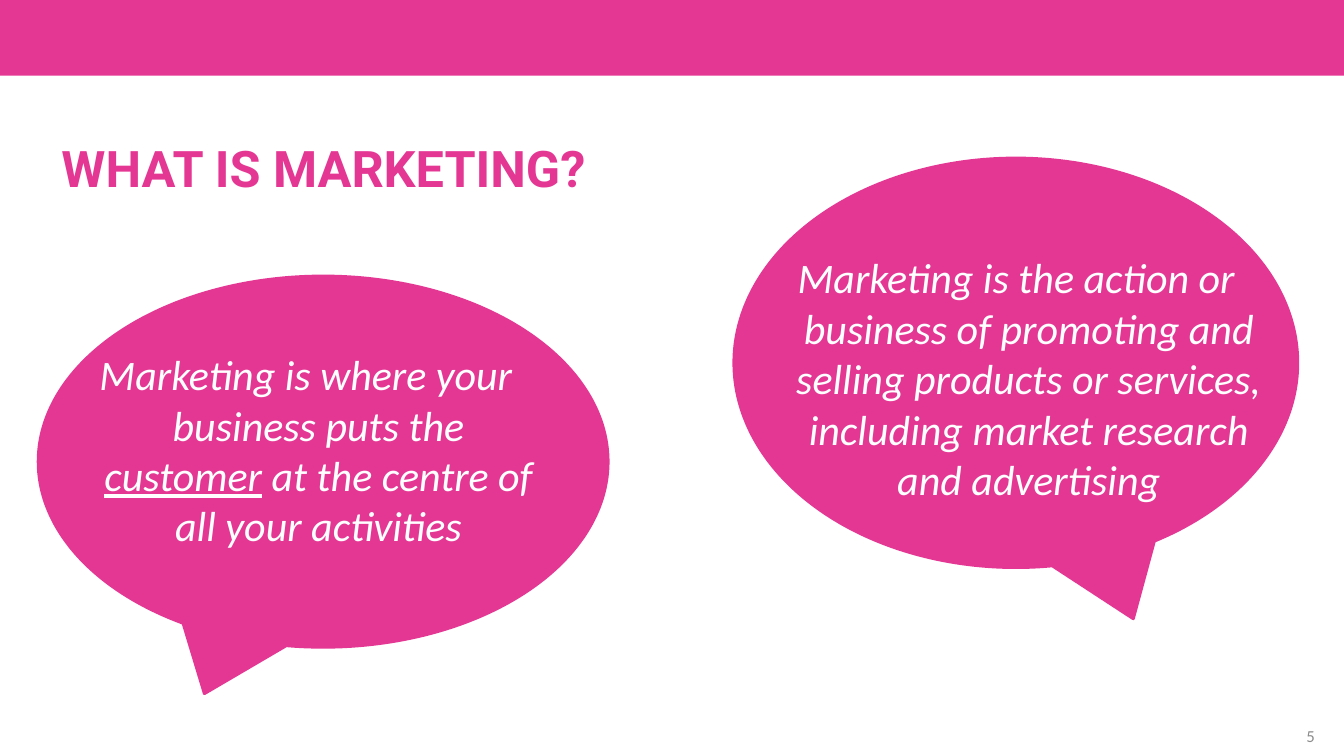
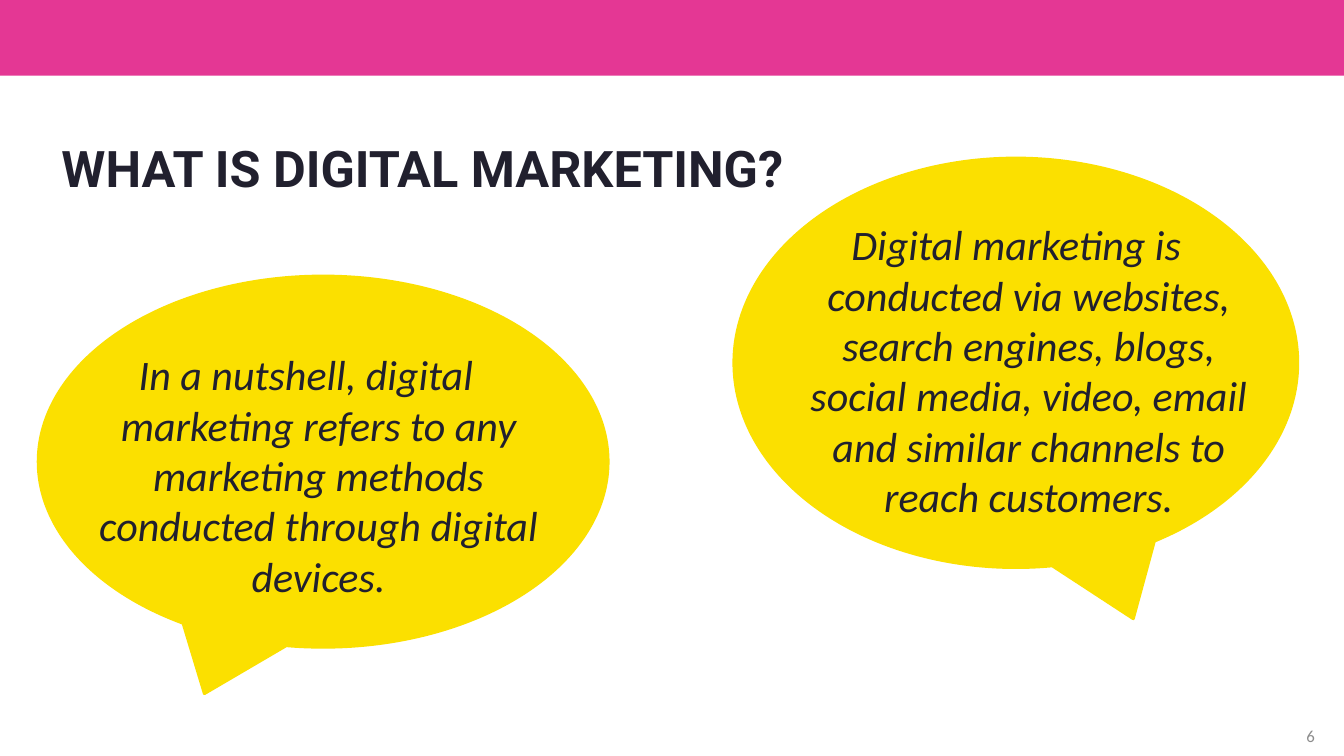
import dataclasses

import pptx
import pptx.dml.color
import pptx.enum.shapes
import pptx.enum.text
import pptx.util

Inches = pptx.util.Inches
Color = pptx.dml.color.RGBColor
Align = pptx.enum.text.PP_ALIGN
Anchor = pptx.enum.text.MSO_ANCHOR
Preset = pptx.enum.shapes.MSO_SHAPE


@dataclasses.dataclass(frozen=True)
class Theme:
    pink: Color = Color(0xE4, 0x37, 0x94)
    yellow: Color = Color(0xFB, 0xE0, 0x00)
    ink: Color = Color(0x21, 0x20, 0x2E)
    white: Color = Color(0xFF, 0xFF, 0xFF)
    gray: Color = Color(0x8C, 0x8C, 0x8C)
    title_font: str = "Roboto"
    body_font: str = "Calibri"
    title_size: int = 36
    quote_size: int = 30
    number_size: int = 12
    outline: float = 2.25


@dataclasses.dataclass(frozen=True)
class Box:
    left: float
    top: float
    width: float
    height: float

    def inches(self):
        return [Inches(value) for value in dataclasses.astuple(self)]

    def inside(self, left, top, width, height):
        return Box(self.left + left, self.top + top, width, height)


THEME = Theme()
PAGE = Box(0, 0, 13.33, 7.5)
BAND = PAGE.inside(0, 0, PAGE.width, 0.75)
TITLE = PAGE.inside(0.51, 1.38, 12.31, 0.69)
NUMBER = PAGE.inside(8.44, 7.17, 4.7, 0.25)
LEFT_BUBBLE = PAGE.inside(0.38, 2.74, 5.65, 3.68)
RIGHT_BUBBLE = PAGE.inside(7.28, 1.57, 5.59, 4.06)


def add_run(paragraph, text, font_name, size, color, bold=False, italic=False, underline=False):
    run = paragraph.add_run()
    run.text = text
    run.font.name = font_name
    run.font.size = pptx.util.Pt(size)
    run.font.color.rgb = color
    run.font.bold = bold
    run.font.italic = italic
    run.font.underline = underline


def add_filled_shape(slide, preset, box, color):
    shape = slide.shapes.add_shape(preset, *box.inches())
    shape.shadow.inherit = False
    shape.fill.solid()
    shape.fill.fore_color.rgb = color
    return shape


def add_text_box(slide, box, alignment, anchor):
    frame = slide.shapes.add_textbox(*box.inches()).text_frame
    frame.word_wrap = True
    frame.vertical_anchor = anchor
    paragraph = frame.paragraphs[0]
    paragraph.alignment = alignment
    return paragraph


def add_band(slide, box):
    band = add_filled_shape(slide, Preset.RECTANGLE, box, THEME.pink)
    band.line.fill.background()


def add_number(slide, box, number):
    paragraph = add_text_box(slide, box, Align.RIGHT, Anchor.MIDDLE)
    add_run(paragraph, str(number), THEME.body_font, THEME.number_size, THEME.gray)


def place_title(slide, box, text, color):
    title = slide.shapes.title
    title.left, title.top, title.width, title.height = box.inches()
    frame = title.text_frame
    frame.auto_size = pptx.enum.text.MSO_AUTO_SIZE.NONE
    frame.vertical_anchor = Anchor.TOP
    paragraph = frame.paragraphs[0]
    paragraph.alignment = Align.LEFT
    paragraph.line_spacing = 0.9
    add_run(paragraph, text, THEME.title_font, THEME.title_size, color, bold=True)


def add_bubble(slide, box, color, tail_right=False):
    bubble = add_filled_shape(slide, Preset.OVAL_CALLOUT, box, color)
    bubble.line.color.rgb = color
    bubble.line.width = pptx.util.Pt(THEME.outline)
    if tail_right:
        bubble.adjustments[0] = -bubble.adjustments[0]


def add_quote(slide, box, pieces, color):
    paragraph = add_text_box(slide, box, Align.CENTER, Anchor.TOP)
    properties = paragraph._p.get_or_add_pPr()
    properties.set("marL", str(Inches(0.25)))
    properties.set("indent", str(Inches(-0.25)))
    for text, underline in pieces:
        add_run(paragraph, text, THEME.body_font, THEME.quote_size, color,
                italic=True, underline=underline)


def add_definition_slide(presentation, number, title, title_color, bubble_color, text_color,
                         left_quote, right_quote, right_quote_top):
    slide = presentation.slides.add_slide(presentation.slide_layouts.get_by_name("Title Only"))
    add_band(slide, BAND)
    add_number(slide, NUMBER, number)
    place_title(slide, TITLE, title, title_color)
    add_bubble(slide, LEFT_BUBBLE, bubble_color)
    add_quote(slide, LEFT_BUBBLE.inside(0.24, 0.67, 4.83, 2.63), left_quote, text_color)
    add_bubble(slide, RIGHT_BUBBLE, bubble_color, tail_right=True)
    add_quote(slide, RIGHT_BUBBLE.inside(0.25, right_quote_top, 5.1, 3.25), right_quote, text_color)


def main():
    presentation = pptx.Presentation()
    presentation.slide_width = Inches(PAGE.width)
    presentation.slide_height = Inches(PAGE.height)
    add_definition_slide(
        presentation, 5, "WHAT IS MARKETING?", THEME.pink, THEME.pink, THEME.white,
        [("Marketing is where your business puts the ", False),
         ("customer", True),
         (" at the centre of all your activities", False)],
        [("Marketing is the action or business of promoting and selling products or services, "
          "including market research and advertising", False)],
        right_quote_top=0.88)
    add_definition_slide(
        presentation, 6, "WHAT IS DIGITAL MARKETING?", THEME.ink, THEME.yellow, THEME.ink,
        [("In a nutshell, digital marketing refers to any marketing methods "
          "conducted through digital devices.", False)],
        [("Digital marketing is conducted via websites, search engines, blogs, social media, "
          "video, email and similar channels to reach customers.", False)],
        right_quote_top=0.55)
    presentation.save("out.pptx")


if __name__ == "__main__":
    main()
